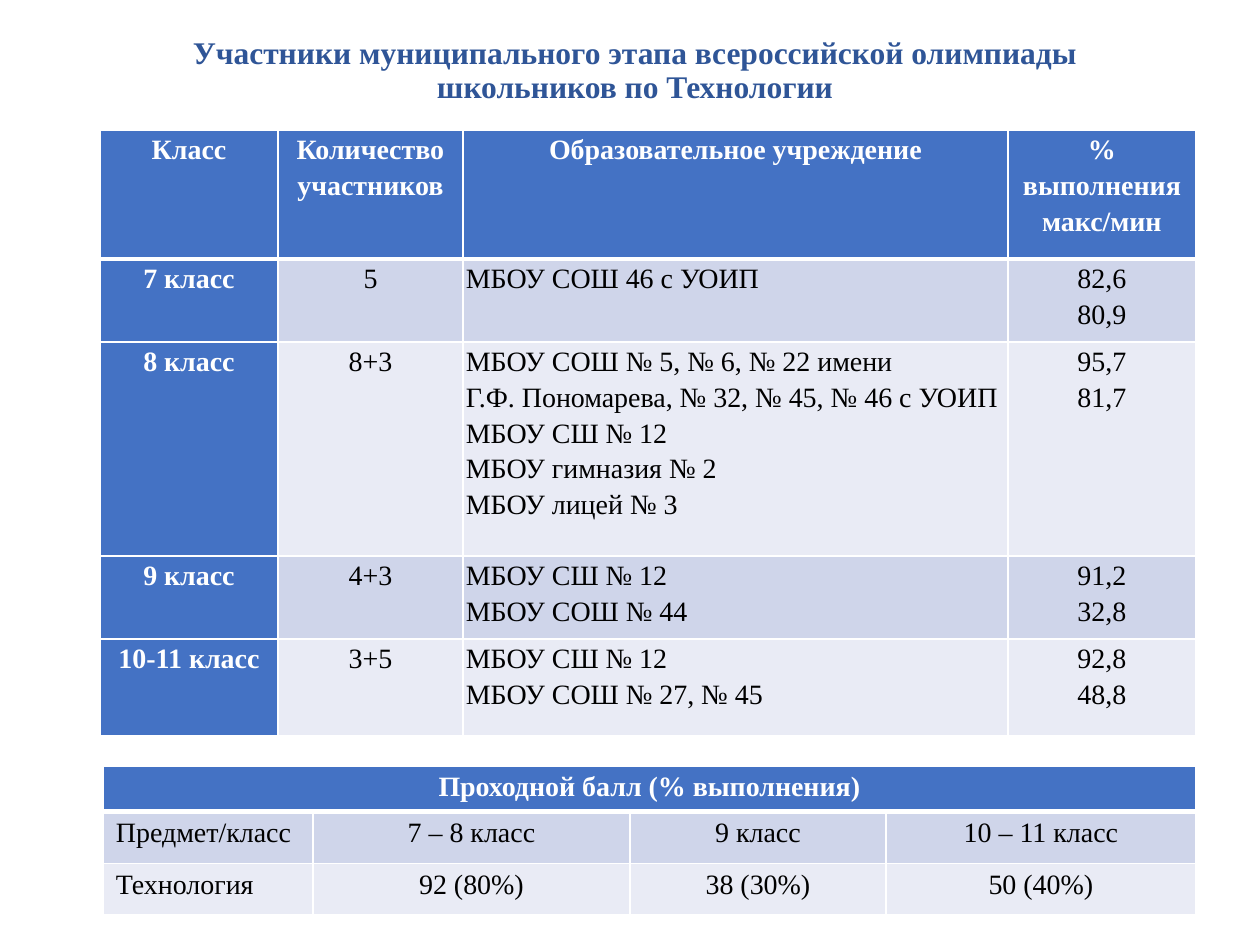
from lxml import etree
from pptx import Presentation
from pptx import util as u
from pptx.dml.color import RGBColor
from pptx.enum import text as t
from pptx.oxml.ns import qn

TITLE = "Участники муниципального этапа всероссийской олимпиады школьников по Технологии"

# Each cell is a string; a line break starts a new paragraph.
MAIN = {
    "at": (100, 130), "cols": (178, 185, 545, 188), "rows": (129, 83, 214, 83, 97),
    "left": 2, "side": True, "space": 1.15, "pad": (3, 0),
    "cells": [
        ("Класс", "Количество участников", "Образовательное учреждение",
         "% выполнения\nмакс/мин"),
        ("7 класс", "5", "МБОУ СОШ 46 с УОИП", "82,6\n80,9"),
        ("8 класс", "8+3",
         "МБОУ СОШ № 5, № 6, № 22 имени\n"
         "Г.Ф. Пономарева, № 32, № 45, № 46 с УОИП\n"
         "МБОУ СШ № 12\nМБОУ гимназия № 2\nМБОУ лицей № 3",
         "95,7\n81,7"),
        ("9 класс", "4+3", "МБОУ СШ № 12\nМБОУ СОШ № 44", "91,2\n32,8"),
        ("10-11 класс", "3+5", "МБОУ СШ № 12\nМБОУ СОШ № 27, № 45", "92,8\n48,8"),
    ],
}
PASS = {
    "at": (103, 766), "cols": (210, 317, 256, 310), "rows": (43, 52, 51),
    "left": 0, "side": False, "space": 1.0, "pad": (13, 6),
    "cells": [
        ("Проходной балл (% выполнения)",),
        ("Предмет/класс", "7 – 8 класс", "9 класс", "10 – 11 класс"),
        ("Технология", "92 (80%)", "38 (30%)", "50 (40%)"),
    ],
}
THEME = {
    "font": "Times New Roman", "title": 18, "body": 16,
    "blue": "4472C4", "navy": "2F5597", "bands": ("E9EBF5", "CFD5EA"),
    "white": "FFFFFF", "black": "000000", "thin": 1, "thick": 3,
}


def px(n):
    return u.Emu(round(n * 914400 / 126))


def write(frame, words, size, color, bold, align, space):
    frame.word_wrap = True
    frame.text = words
    for para in frame.paragraphs:
        para.alignment, para.line_spacing = align, space
        look = {"name": THEME["font"], "size": u.Pt(size), "bold": bold}
        for key, val in look.items():
            setattr(para.font, key, val)
        para.font.color.rgb = RGBColor.from_string(color)


def edge(cell, row):
    """Draw white cell borders, with a thick rule under the header row."""
    props = cell._tc.get_or_add_tcPr()
    heavy = {0: "lnB", 1: "lnT"}.get(row)
    for i, tag in enumerate(("lnL", "lnR", "lnT", "lnB")):
        wide = THEME["thick" if tag == heavy else "thin"]
        line = etree.Element(qn("a:" + tag), w=str(u.Pt(wide)))
        fill = etree.SubElement(line, qn("a:solidFill"))
        etree.SubElement(fill, qn("a:srgbClr"), val=THEME["white"])
        props.insert(i, line)


def grid(slide, data):
    cols, rows = data["cols"], data["rows"]
    box = (*data["at"], sum(cols), sum(rows))
    table = slide.shapes.add_table(len(rows), len(cols), *map(px, box)).table
    for col, wide in zip(table.columns, cols):
        col.width = px(wide)
    for row, high in zip(table.rows, rows):
        row.height = px(high)

    side, top = map(px, data["pad"])
    pads = {"margin_left": side, "margin_right": side,
            "margin_top": top, "margin_bottom": top}
    for r, words in enumerate(data["cells"]):
        if len(words) < len(cols):
            table.cell(r, 0).merge(table.cell(r, len(cols) - 1))
        for c in range(len(cols)):
            cell = table.cell(r, c)
            head = r == 0 or (data["side"] and c == 0)
            shade = THEME["blue"] if head else THEME["bands"][r % 2]
            cell.fill.solid()
            cell.fill.fore_color.rgb = RGBColor.from_string(shade)
            edge(cell, r)
            for key, val in pads.items():
                setattr(cell, key, val)
            if c < len(words):
                left = r > 0 and c == data["left"]
                align = t.PP_ALIGN.LEFT if left else t.PP_ALIGN.CENTER
                color = THEME["white" if head else "black"]
                write(cell.text_frame, words[c], THEME["body"], color,
                      head, align, data["space"])


def main():
    deck = Presentation()
    deck.slide_width, deck.slide_height = px(1260), px(945)
    slide = deck.slides.add_slide(deck.slide_layouts[6])
    frame = slide.shapes.add_textbox(*map(px, (92, 30, 1086, 83))).text_frame
    frame.vertical_anchor = t.MSO_ANCHOR.MIDDLE
    write(frame, TITLE, THEME["title"], THEME["navy"], True, t.PP_ALIGN.CENTER, 0.9)
    for data in (MAIN, PASS):
        grid(slide, data)
    deck.save("out.pptx")


if __name__ == "__main__":
    main()
